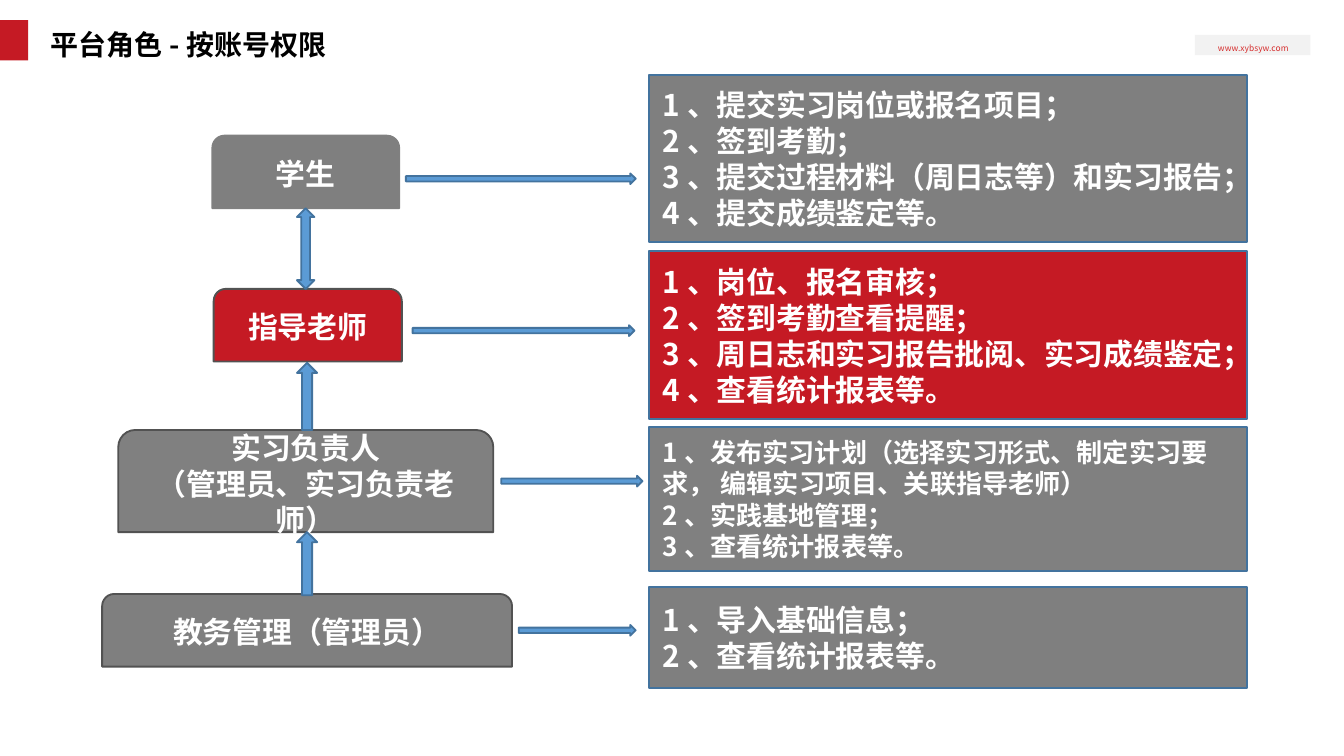
"""Build the slide that maps platform account roles to their permissions."""
from lxml.etree import SubElement
from pptx import Presentation
from pptx.dml.color import RGBColor
from pptx.enum.shapes import MSO_SHAPE
from pptx.enum.text import MSO_ANCHOR, PP_ALIGN
from pptx.oxml.ns import qn
from pptx.util import Inches, Pt

FONT = "Noto Sans CJK SC"
RED = RGBColor(0xC5, 0x1A, 0x24)
GRAY = RGBColor(0x7F, 0x7F, 0x7F)
MID_GRAY = RGBColor(0x80, 0x80, 0x80)
DARK = RGBColor(0x52, 0x52, 0x52)
PALE = RGBColor(0xF2, 0xF2, 0xF2)
LINK = RGBColor(0xD6, 0x2F, 0x2F)
BLUE = RGBColor(0x5B, 0x9B, 0xD5)
NAVY = RGBColor(0x43, 0x73, 0x9E)
WHITE = RGBColor(0xFF, 0xFF, 0xFF)
BLACK = RGBColor(0x00, 0x00, 0x00)

PANEL_LEFT, PANEL_WIDTH = 4.83, 4.45
ARROW_THICKNESS = 0.08

ROLES = [
    ("学生", (1.58, 1.01, 1.39, 0.54), GRAY, MID_GRAY),
    ("指导老师", (1.59, 2.15, 1.4, 0.54), RED, DARK),
    ("实习负责人\n（管理员、实习负责老师）", (0.88, 3.2, 2.79, 0.76), MID_GRAY, DARK),
    ("教务管理（管理员）", (0.76, 4.42, 3.05, 0.54), GRAY, DARK),
]
PANELS = [
    ("1、提交实习岗位或报名项目；\n2、签到考勤；\n"
     "3、提交过程材料（周日志等）和实习报告；\n4、提交成绩鉴定等。", 0.56, 1.24, GRAY, 16),
    ("1、岗位、报名审核；\n2、签到考勤查看提醒；\n"
     "3、周日志和实习报告批阅、实习成绩鉴定；\n4、查看统计报表等。", 1.87, 1.25, RED, 16),
    ("1、发布实习计划（选择实习形式、制定实习要求， 编辑实习项目、关联指导老师）\n"
     "2、实践基地管理；\n3、查看统计报表等。", 3.18, 1.07, MID_GRAY, 14),
    ("1、导入基础信息；\n2、查看统计报表等。", 4.37, 0.75, GRAY, 16),
]
PERMISSION_ARROWS = [(3.02, 1.29, 1.71), (3.07, 2.42, 1.65), (3.73, 3.54, 1.05), (3.86, 4.65, 0.87)]
ROLE_ARROWS = [
    (MSO_SHAPE.UP_DOWN_ARROW, (2.21, 1.55, 0.13, 0.6)),
    (MSO_SHAPE.UP_ARROW, (2.21, 2.7, 0.15, 0.5)),
    (MSO_SHAPE.UP_ARROW, (2.21, 3.96, 0.15, 0.47)),
]


def write_text(tf, text, size=16, color=WHITE, bold=True, align=PP_ALIGN.LEFT,
               anchor=MSO_ANCHOR.MIDDLE, spacing=None):
    tf.word_wrap = True
    tf.vertical_anchor = anchor
    for i, line in enumerate(text.split("\n")):
        p = tf.paragraphs[0] if i == 0 else tf.add_paragraph()
        p.alignment = align
        p.line_spacing = spacing
        r = p.add_run()
        r.text = line
        r.font.name = FONT
        r.font.size = Pt(size)
        r.font.bold = bold
        r.font.color.rgb = color
        SubElement(r.font._element, qn("a:ea"), typeface=FONT)


class RoleSlide:
    def __init__(self, prs):
        self.s = prs.slides.add_slide(prs.slide_layouts[6])

    def shape(self, kind, box, fill, line=None):
        sp = self.s.shapes.add_shape(kind, *map(Inches, box))
        sp.shadow.inherit = False
        sp.fill.solid()
        sp.fill.fore_color.rgb = fill
        if line is None:
            sp.line.fill.background()
        else:
            sp.line.color.rgb = line
            sp.line.width = Pt(1)
        return sp

    def label(self, text, box, **style):
        tf = self.s.shapes.add_textbox(*map(Inches, box)).text_frame
        write_text(tf, text, **style)
        return tf

    def role(self, text, box, fill, line):
        sp = self.shape(MSO_SHAPE.ROUND_2_SAME_RECTANGLE, box, fill, line)
        write_text(sp.text_frame, text, align=PP_ALIGN.CENTER)

    def panel(self, text, top, height, fill, size):
        sp = self.shape(MSO_SHAPE.RECTANGLE, (PANEL_LEFT, top, PANEL_WIDTH, height), fill, NAVY)
        write_text(sp.text_frame, text, size=size)

    def arrow(self, kind, box):
        self.shape(kind, box, BLUE, NAVY)

    def header(self):
        self.shape(MSO_SHAPE.RECTANGLE, (0, 0.15, 0.21, 0.3), RED)
        self.shape(MSO_SHAPE.RECTANGLE, (8.89, 0.26, 0.86, 0.15), PALE)
        tf = self.label("www.xybsyw.com", (9, 0.27, 0.65, 0.18), size=4.5, color=LINK,
                        bold=False, align=PP_ALIGN.CENTER, anchor=MSO_ANCHOR.TOP)
        tf.margin_left = tf.margin_right = Inches(0.05)
        self.label("平台角色-按账号权限", (0.28, 0.08, 5.97, 0.43), size=15, color=BLACK,
                   anchor=MSO_ANCHOR.BOTTOM, spacing=0.9)


def main():
    prs = Presentation()
    prs.slide_width = Inches(10)
    prs.slide_height = prs.slide_width * 9 // 16
    slide = RoleSlide(prs)
    slide.header()
    for role in ROLES:
        slide.role(*role)
    for panel in PANELS:
        slide.panel(*panel)
    for left, top, width in PERMISSION_ARROWS:
        slide.arrow(MSO_SHAPE.RIGHT_ARROW, (left, top, width, ARROW_THICKNESS))
    for kind, box in ROLE_ARROWS:
        slide.arrow(kind, box)
    prs.save("out.pptx")


if __name__ == "__main__":
    main()
